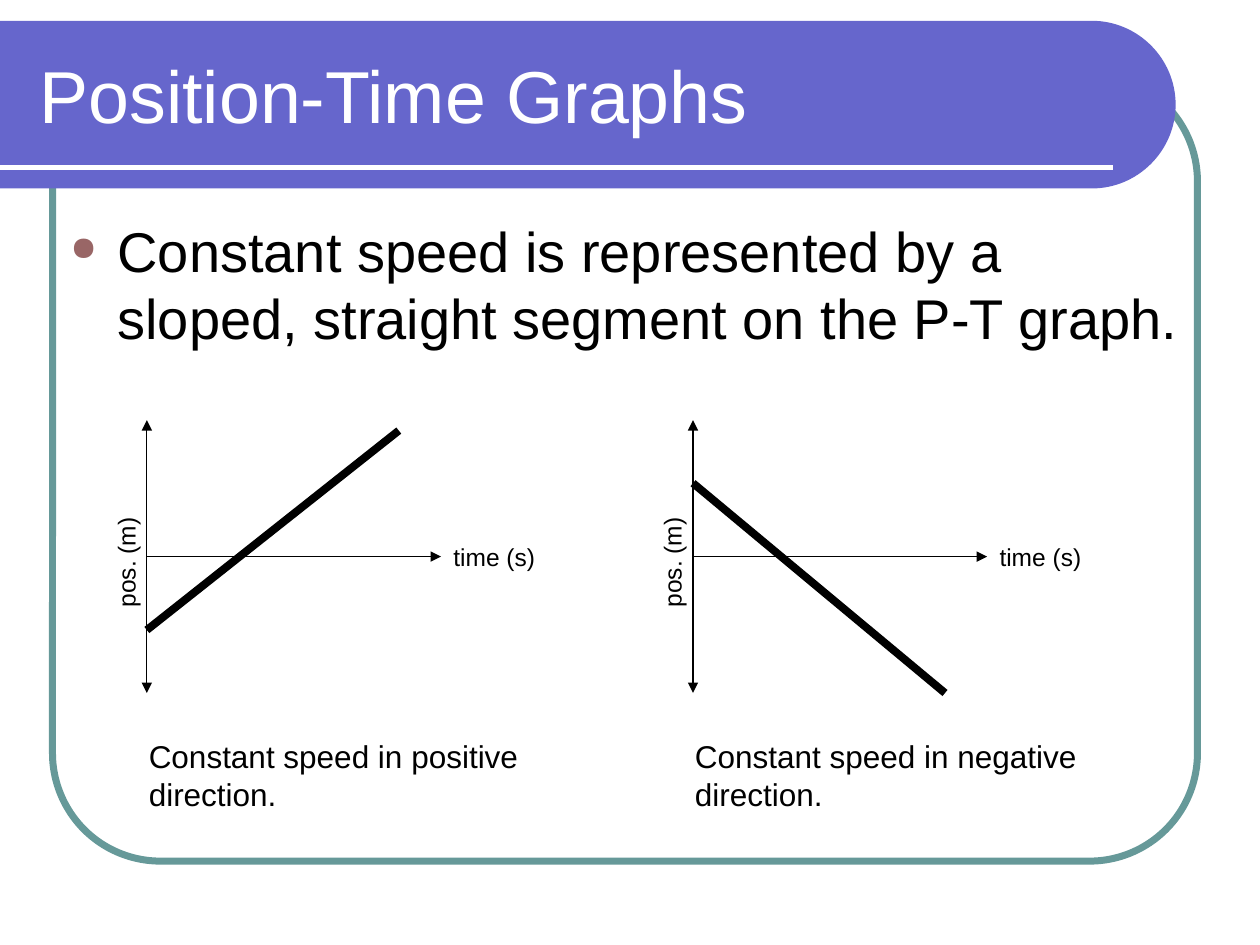
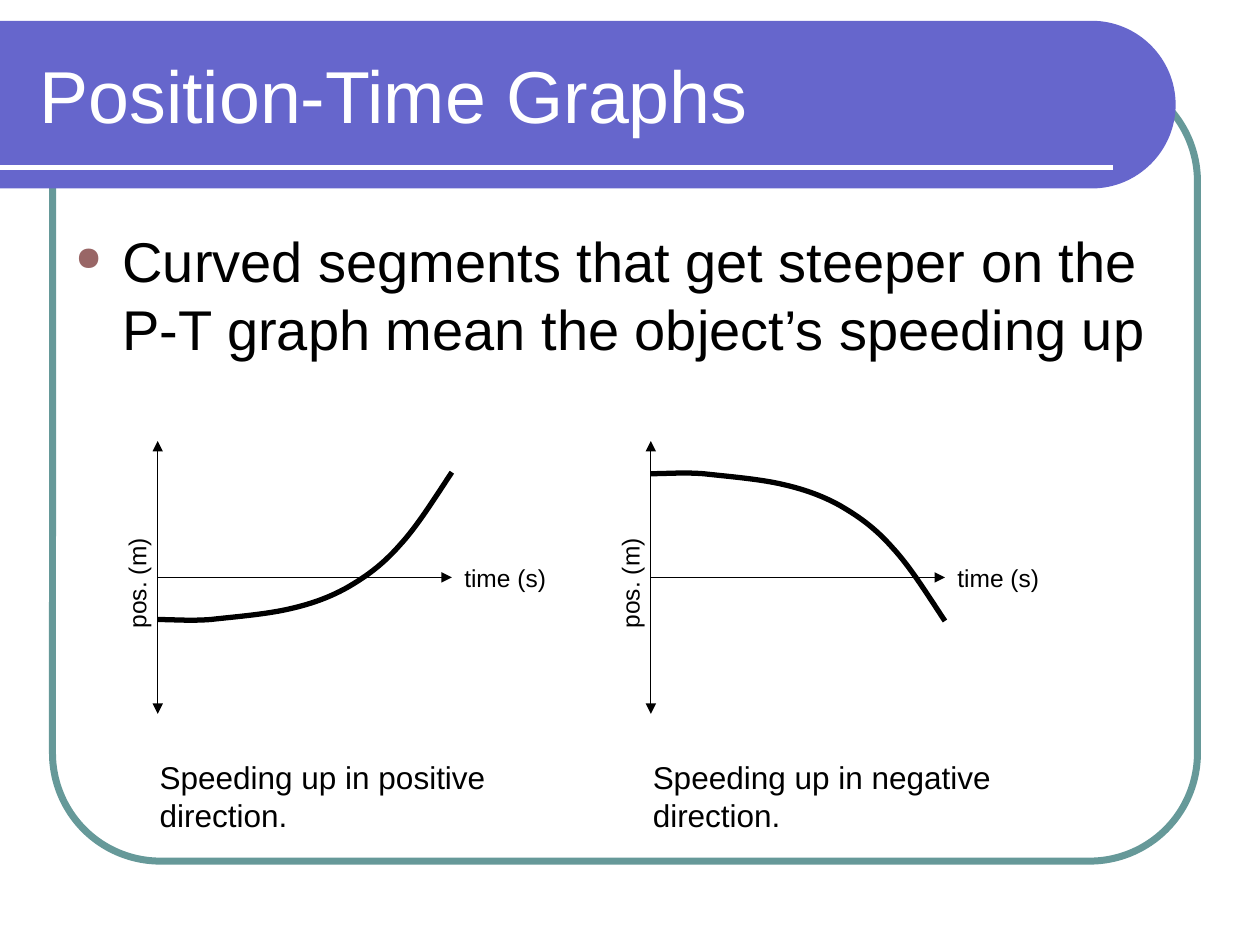
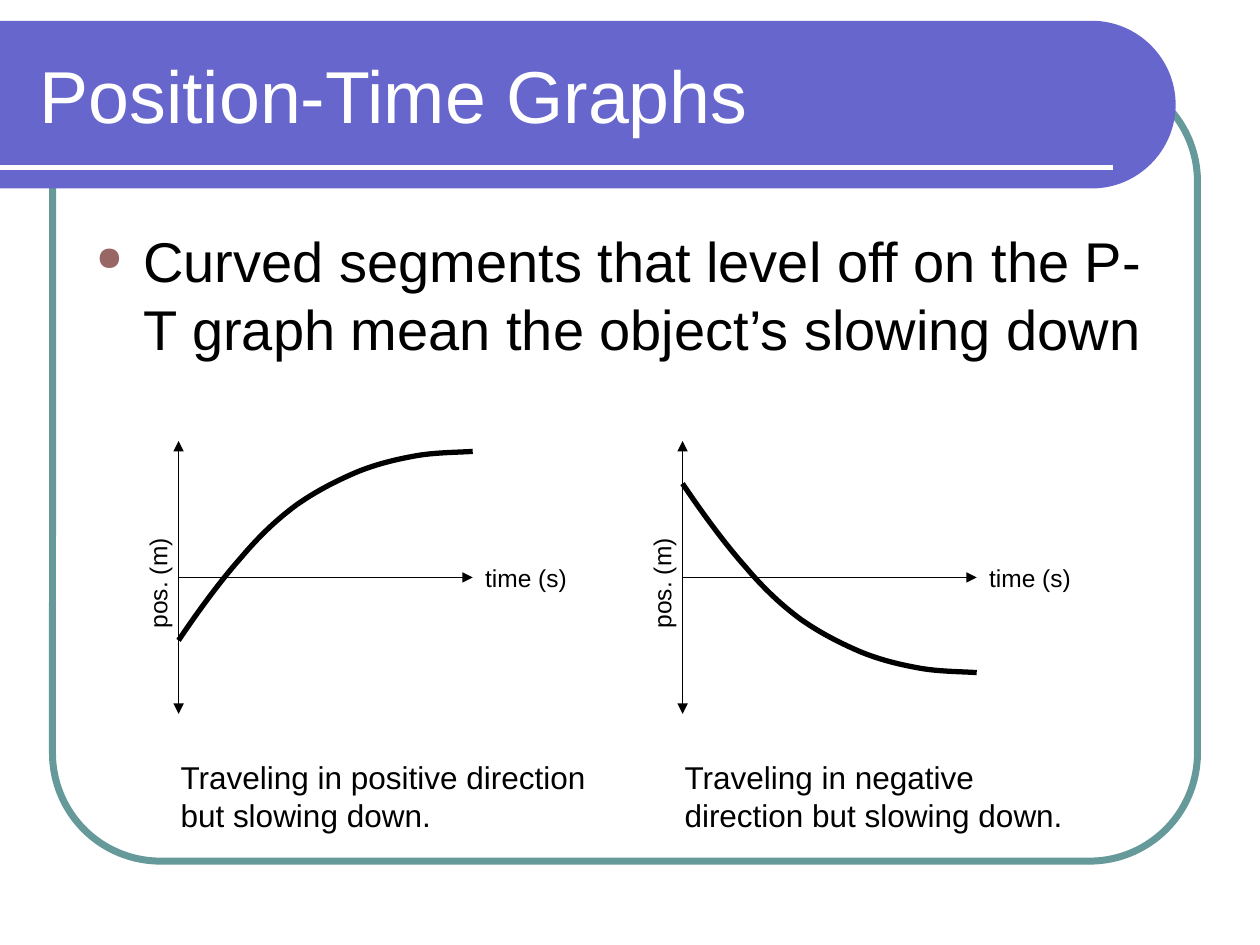
import pptx
import pptx.dml.color
import pptx.enum.shapes
import pptx.enum.text
import pptx.oxml.ns
import pptx.util
from lxml import etree

Cm = pptx.util.Cm
Pt = pptx.util.Pt
qn = pptx.oxml.ns.qn

COLORS = {"band": "6666CC", "frame": "669999", "bullet": "996666",
          "ink": "000000", "paper": "FFFFFF"}
FONT = "Arial"
TITLE = "Position-Time Graphs"
BAND_TOP, BAND_RADIUS, BAND_STRAIGHT = 0.42, 1.69, 22.01
ARC = 0.55  # handle length of a quarter circle, as a share of its radius
AXIS_UP, AXIS_RIGHT = 2.75, 5.93

# Bézier points in cm from the start of the curve, heights upwards
SPEEDING_UP = [(0, 0), (0.33, 0), (0.64, -0.03), (1.06, 0),
               (1.5, 0.05), (2.13, 0.1), (2.59, 0.2),
               (3.05, 0.3), (3.43, 0.43), (3.81, 0.64),
               (4.19, 0.86), (4.52, 1.09), (4.88, 1.5),
               (5.23, 1.88), (5.56, 2.41), (5.93, 2.97)]
SLOWING_DOWN = [(0, 0), (0.41, 0.61), (0.86, 1.22), (1.27, 1.68),
                (1.65, 2.13), (2.01, 2.46), (2.39, 2.74),
                (2.79, 3.02), (3.21, 3.23), (3.61, 3.4),
                (4.01, 3.56), (4.39, 3.65), (4.78, 3.72),
                (5.16, 3.79), (5.66, 3.79), (5.93, 3.81)]


def rgb(name):
    return pptx.dml.color.RGBColor.from_string(COLORS[name])


def apply(obj, fmt):
    for name, value in fmt.items():
        setattr(obj, name, value)


class Deck:
    def __init__(self):
        self.prs = pptx.Presentation()
        apply(self.prs, {"slide_width": Cm(25.4), "slide_height": Cm(19.05)})
        self.s = None

    def slide(self, bullet, box):
        self.s = self.prs.slides.add_slide(self.prs.slide_layouts[6])
        self.frame()
        self.band()
        self.line((0, 3.38), (22.44, 3.38), 3, "paper")
        self.text(TITLE, (0.55, 0.62, 22.28, 2.54), 42, "paper",
                  vertical_anchor=pptx.enum.text.MSO_ANCHOR.MIDDLE)
        self.bullet(bullet, box)

    def frame(self):
        sp = self.s.shapes.add_shape(pptx.enum.shapes.MSO_SHAPE.ROUNDED_RECTANGLE,
                                     *map(Cm, (1.06, 1.48, 23.08, 15.88)))
        sp.adjustments[0] = 0.137
        self.style(sp, line="frame", width=4)

    def band(self):
        left, r = BAND_STRAIGHT, BAND_RADIUS
        middle = BAND_TOP + r
        offsets = [(0, -1), (ARC, -1), (1, -ARC), (1, 0), (1, ARC), (ARC, 1), (0, 1)]
        arc = [(left + r * dx, middle + r * dy) for dx, dy in offsets]
        self.outline([(0, BAND_TOP), *arc, (0, middle + r)], "LCCL", True, fill="band")

    def outline(self, points, segments, close, **style):
        """Draw an outline; segments has an L for each line, a C for each Bézier curve."""
        pts = [(Cm(x), Cm(y)) for x, y in points]
        fb = self.s.shapes.build_freeform(*pts[0])
        fb.add_line_segments(pts[1:], close=close)
        sp = fb.convert_to_shape()
        steps = iter(list(sp._element.iter(qn("a:lnTo"))))
        for kind in segments:
            step = next(steps)
            if kind == "C":
                step.addprevious(curve := etree.Element(qn("a:cubicBezTo")))
                for part in (step, next(steps), next(steps)):
                    curve.append(part[0])
                    part.getparent().remove(part)
        self.style(sp, **style)

    def style(self, sp, fill=None, line=None, width=1):
        sp.shadow.inherit = False
        if fill:
            sp.fill.solid()
            sp.fill.fore_color.rgb = rgb(fill)
        else:
            sp.fill.background()
        if line:
            sp.line.color.rgb = rgb(line)
            sp.line.width = Pt(width)
        else:
            sp.line.fill.background()

    def line(self, start, end, width, color="ink", arrows=()):
        """Draw a straight line; arrows names its pointed ends, headEnd or tailEnd."""
        c = self.s.shapes.add_connector(pptx.enum.shapes.MSO_CONNECTOR.STRAIGHT,
                                        *map(Cm, (*start, *end)))
        c.line.color.rgb = rgb(color)
        c.line.width = Pt(width)
        ln = c.line._get_or_add_ln()
        for end_tag in arrows:
            etree.SubElement(ln, qn("a:" + end_tag), type="triangle")
        etree.SubElement(c._element.spPr, qn("a:effectLst"))
        return c

    def text(self, text, box, size, color="ink", rotation=0, **frame_fmt):
        sp = self.s.shapes.add_textbox(*map(Cm, box))
        sp.rotation = rotation
        apply(sp.text_frame, {"word_wrap": True, **frame_fmt})
        r = sp.text_frame.paragraphs[0].add_run()
        r.text = text
        apply(r.font, {"name": FONT, "size": Pt(size)})
        r.font.color.rgb = rgb(color)
        return sp

    def bullet(self, text, box):
        p = self.text(text, box, 32).text_frame.paragraphs[0]
        p.space_before = Pt(6.4)
        pPr = p._p.get_or_add_pPr()
        pPr.set("marL", str(Cm(0.95)))
        pPr.set("indent", str(-Cm(0.95)))
        color = etree.SubElement(pPr, qn("a:buClr"))
        etree.SubElement(color, qn("a:srgbClr"), val=COLORS["bullet"])
        etree.SubElement(pPr, qn("a:buSzPct"), val="60000")
        etree.SubElement(pPr, qn("a:buChar"), char="●")

    def axes(self, x, y, caption):
        """Draw labelled axes with their origin at x, y and a caption below."""
        self.line((x, y - AXIS_UP), (x, y + AXIS_UP), 0.75, arrows=("headEnd", "tailEnd"))
        time = self.text("time (s)", (x + AXIS_RIGHT, y - 0.42, 2.33, 0.84), 14)
        axis = self.line((x, y), (x + AXIS_RIGHT, y), 0.75, arrows=("tailEnd",))
        axis.end_connect(time, 1)
        self.text("pos. (m)", (x - 1.59, y - 0.31, 2.33, 0.84), 14, rotation=270)
        self.text(caption, (x - 0.21, y + 3.52, 8.68, 1.77), 18)

    def curve(self, x, y, points, sign):
        """Draw a curve from x, y; a sign of -1 turns it upside down."""
        self.outline([(x + dx, y - sign * dy) for dx, dy in points],
                     "C" * (len(points) // 3), False, line="ink", width=3)


def main():
    deck = Deck()

    deck.slide("Constant speed is represented by a sloped, straight segment on the P-T graph.",
               (1.17, 4.24, 23.07, 3.81))
    y = 11.22
    for x, word, start, end in ((2.96, "positive", 1.48, -2.54),
                                (13.97, "negative", -1.48, 2.75)):
        deck.axes(x, y, f"Constant speed in {word} direction.")
        deck.line((x, y + start), (x + 5.08, y + end), 4.5)

    y = 11.64
    curved = (
        ("Curved segments that get steeper on the P-T graph mean the object’s speeding up",
         (1.27, 4.45, 22.43, 3.6), "Speeding up in {} direction.", SPEEDING_UP,
         ((3.18, 0.85), (13.12, -2.09))),
        ("Curved segments that level off on the P-T graph mean the object’s slowing down",
         (1.69, 4.45, 22.01, 12.28), "Traveling in {} direction but slowing down.",
         SLOWING_DOWN, ((3.6, 1.27), (13.76, -1.89))),
    )
    for bullet, box, caption, points, graphs in curved:
        deck.slide(bullet, box)
        for (x, start), word, sign in zip(graphs, ("positive", "negative"), (1, -1)):
            deck.axes(x, y, caption.format(word))
            deck.curve(x, y + start, points, sign)

    deck.prs.save("out.pptx")


if __name__ == "__main__":
    main()
